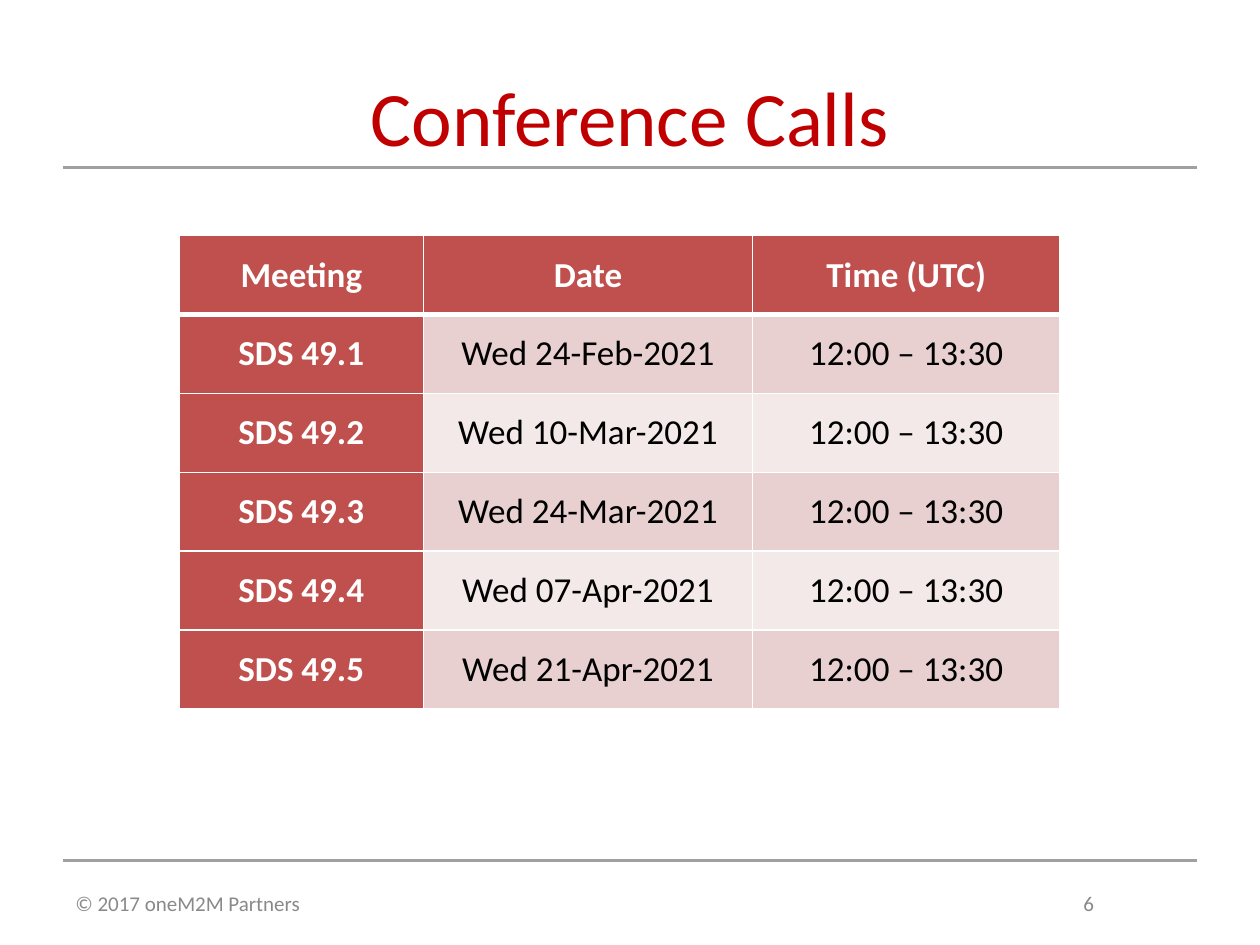
from lxml import etree
from pptx import Presentation
from pptx.dml.color import RGBColor
from pptx.enum.shapes import MSO_CONNECTOR
from pptx.enum.text import MSO_ANCHOR, PP_ALIGN
from pptx.oxml.ns import qn
from pptx.util import Cm, Pt

CENTER = PP_ALIGN.CENTER
LEFT = PP_ALIGN.LEFT
TOP = MSO_ANCHOR.TOP
MIDDLE = MSO_ANCHOR.MIDDLE
STRAIGHT = MSO_CONNECTOR.STRAIGHT

COLORS = {
    "title": "C00000",
    "rule": "A0A0A3",
    "footer": "898989",
    "accent": "C0504D",
    "band_dark": "E8D0D0",
    "band_light": "F4E9E9",
    "white": "FFFFFF",
    "black": "000000",
}
MARGIN = 1.27
CONTENT_WIDTH = 22.86
FOOTER_TOP = 17.35
COLUMN_WIDTHS = (4.93, 6.63, 6.2)
ROW_HEIGHT = 1.59
HEADER = ("Meeting", "Date", "Time (UTC)")
DATES = ("24-Feb", "10-Mar", "24-Mar", "07-Apr", "21-Apr")
CALL_TIME = "12:00 – 13:30"


def color(name):
    return RGBColor.from_string(COLORS[name])


def apply(target, values):
    for name, value in values.items():
        setattr(target, name, value)


def write(paragraph, text, size, color_name, bold=False, alignment=LEFT):
    paragraph.text = text
    paragraph.alignment = alignment
    font = paragraph.runs[0].font
    apply(font, {"name": "Calibri", "size": Pt(size), "bold": bold})
    font.color.rgb = color(color_name)


def add_rule(slide, top):
    rule = slide.shapes.add_connector(
        STRAIGHT, Cm(MARGIN), Cm(top), Cm(MARGIN + CONTENT_WIDTH), Cm(top)
    )
    rule.line.color.rgb = color("rule")
    rule.line.width = Pt(1.75)
    etree.SubElement(rule._element.spPr, qn("a:effectLst"))


def add_text(slide, top, height, anchor):
    box = slide.shapes.add_textbox(Cm(MARGIN), Cm(top), Cm(CONTENT_WIDTH), Cm(height))
    apply(box.text_frame, {"word_wrap": True, "vertical_anchor": anchor})
    return box.text_frame.paragraphs[0]


def add_tab_stop(paragraph, position):
    tabs = etree.SubElement(paragraph._p.get_or_add_pPr(), qn("a:tabLst"))
    etree.SubElement(tabs, qn("a:tab"), pos=str(Cm(position)), algn="l")


def add_border(cell, side, width):
    border = etree.SubElement(
        cell._tc.get_or_add_tcPr(), qn(f"a:ln{side}"), w=str(Pt(width))
    )
    fill = etree.SubElement(border, qn("a:solidFill"))
    etree.SubElement(fill, qn("a:srgbClr"), val=COLORS["white"])


def format_cell(cell, row, column, text):
    header_edge = {0: "B", 1: "T"}.get(row)
    for side in "LRTB":
        add_border(cell, side, 3 if side == header_edge else 1)
    accented = row == 0 or column == 0
    band = "band_dark" if row % 2 else "band_light"
    cell.fill.solid()
    cell.fill.fore_color.rgb = color("accent" if accented else band)
    apply(cell, {
        "vertical_anchor": MIDDLE,
        "margin_left": Cm(0.18),
        "margin_right": Cm(0.18),
        "margin_top": 0,
        "margin_bottom": 0,
    })
    write(cell.text_frame.paragraphs[0], text, 20,
          "white" if accented else "black", accented, CENTER)


def add_schedule(slide, rows):
    table = slide.shapes.add_table(
        len(rows), len(COLUMN_WIDTHS), Cm(3.61), Cm(4.75),
        Cm(sum(COLUMN_WIDTHS)), Cm(ROW_HEIGHT * len(rows)),
    ).table
    for column, width in zip(table.columns, COLUMN_WIDTHS):
        column.width = Cm(width)
    for row_index, values in enumerate(rows):
        table.rows[row_index].height = Cm(ROW_HEIGHT)
        for column_index, text in enumerate(values):
            format_cell(table.cell(row_index, column_index),
                        row_index, column_index, text)


def main():
    presentation = Presentation()
    apply(presentation, {"slide_width": Cm(25.4), "slide_height": Cm(19.05)})
    slide = presentation.slides.add_slide(presentation.slide_layouts[6])

    for top in (FOOTER_TOP, 3.38):
        add_rule(slide, top)

    title = add_text(slide, 1.27, 3.18, TOP)
    write(title, "Conference Calls", 44, "title", alignment=CENTER)

    footer = add_text(slide, FOOTER_TOP, 1.7, MIDDLE)
    add_tab_stop(footer, 20.32)
    write(footer, "© 2017 oneM2M Partners\t6", 12, "footer")

    calls = [(f"SDS 49.{number}", f"Wed {date}-2021", CALL_TIME)
             for number, date in enumerate(DATES, start=1)]
    add_schedule(slide, [HEADER, *calls])

    presentation.save("out.pptx")


if __name__ == "__main__":
    main()
